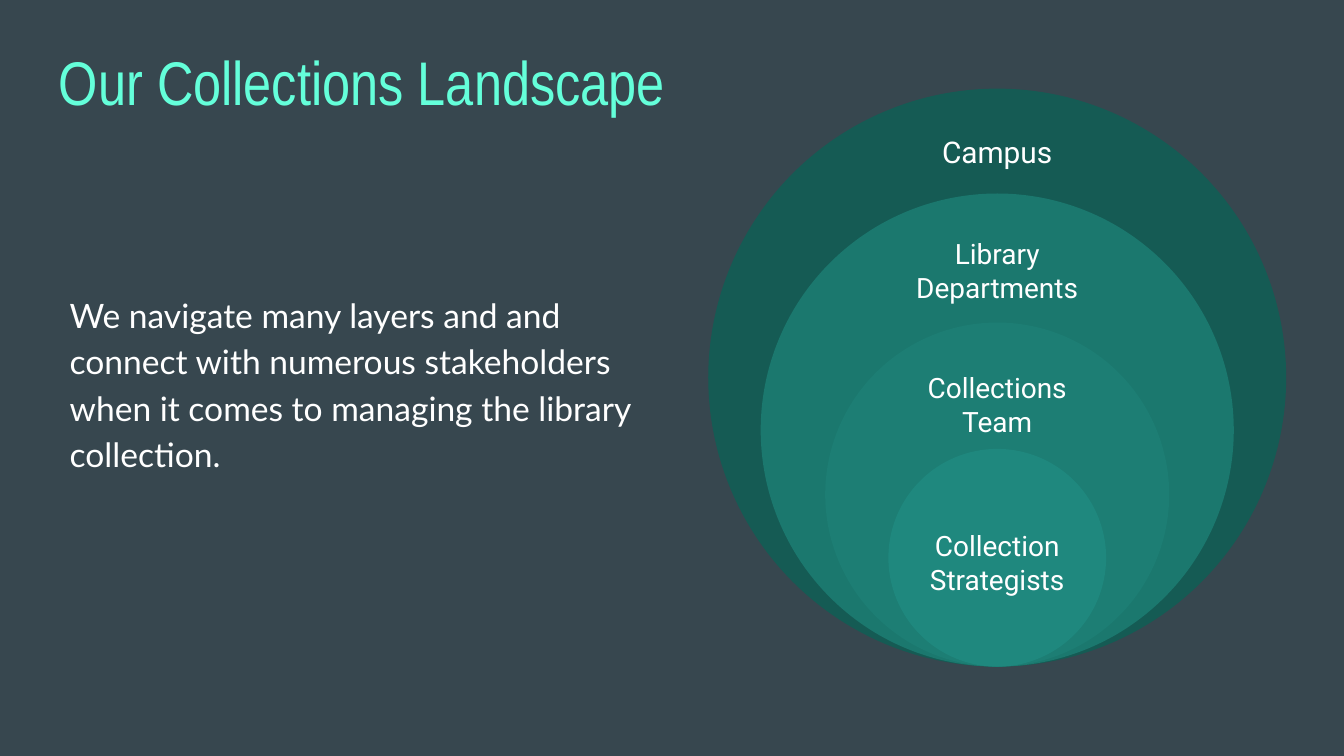
from pptx import Presentation
from pptx.dml.color import RGBColor
from pptx.enum.shapes import MSO_SHAPE as Shape
from pptx.enum.text import MSO_ANCHOR as Anchor, PP_ALIGN as Align
from pptx.util import Inches, Pt

COLORS = {
    "background": "37474F",
    "title": "64FFDA",
    "text": "FFFFFF",
    "campus": "155B54",
    "departments": "1B786E",
    "team": "1D7E74",
    "strategists": "1F887E",
}

# All circles share a vertical axis and touch at the bottom
AXIS_X, BOTTOM_Y = 7.42, 4.96

# Colour, diameter, label, label top, label width, label height, text size
LAYERS = [
    ("campus", 4.3, "Campus", 0.75, 2.11, 0.75, 16),
    ("departments", 3.52, "Library Departments", 1.7, 1.73, 0.62, 15),
    ("team", 2.56, "Collections Team", 2.72, 1.62, 0.58, 15),
    ("strategists", 1.62, "Collection Strategists", 3.83, 1.35, 0.71, 15),
]


def color(name):
    return RGBColor.from_string(COLORS[name])


def add_text(shapes, text, place, font, size, ink="text", anchor=Anchor.TOP, **para_format):
    box = shapes.add_textbox(*(Inches(length) for length in place))
    frame = box.text_frame
    frame_format = {"word_wrap": True, "vertical_anchor": anchor}
    for side in ("left", "top", "right", "bottom"):
        frame_format[f"margin_{side}"] = Inches(0.1)
    for name, value in frame_format.items():
        setattr(frame, name, value)

    para = frame.paragraphs[0]
    for name, value in para_format.items():
        setattr(para, name, value)

    span = para.add_run()
    span.text = text
    for name, value in {"name": font, "size": Pt(size)}.items():
        setattr(span.font, name, value)
    span.font.color.rgb = color(ink)


def add_circle(shapes, diameter, fill):
    place = (AXIS_X - diameter / 2, BOTTOM_Y - diameter, diameter, diameter)
    circle = shapes.add_shape(Shape.OVAL, *(Inches(length) for length in place))
    circle.shadow.inherit = False
    circle.fill.solid()
    circle.fill.fore_color.rgb = color(fill)
    circle.line.fill.background()


def add_layer(page, fill, diameter, label, top, width, height, size):
    group = page.shapes.add_group_shape()
    add_circle(group.shapes, diameter, fill)
    add_text(group.shapes, label, (AXIS_X - width / 2, top, width, height),
             "Roboto", size, anchor=Anchor.MIDDLE, alignment=Align.CENTER)


def main():
    # Widescreen page, 16 to 9
    deck = Presentation()
    deck.slide_width, deck.slide_height = Inches(10), Inches(10 * 9 / 16)
    page = deck.slides.add_slide(deck.slide_layouts[6])
    page.background.fill.solid()
    page.background.fill.fore_color.rgb = color("background")

    # Title and body text
    add_text(page.shapes, "Our Collections Landscape", (0.34, 0.23, 5.02, 0.63),
             "Arial Narrow", 33, ink="title")
    add_text(page.shapes,
             "We navigate many layers and and connect with numerous stakeholders "
             "when it comes to managing the library collection.",
             (0.42, 2.05, 4.42, 1.52), "Lato", 18,
             line_spacing=1.15, space_after=Pt(12))

    # Nested circles, from the outermost in
    for layer in LAYERS:
        add_layer(page, *layer)

    deck.save("out.pptx")


if __name__ == "__main__":
    main()
